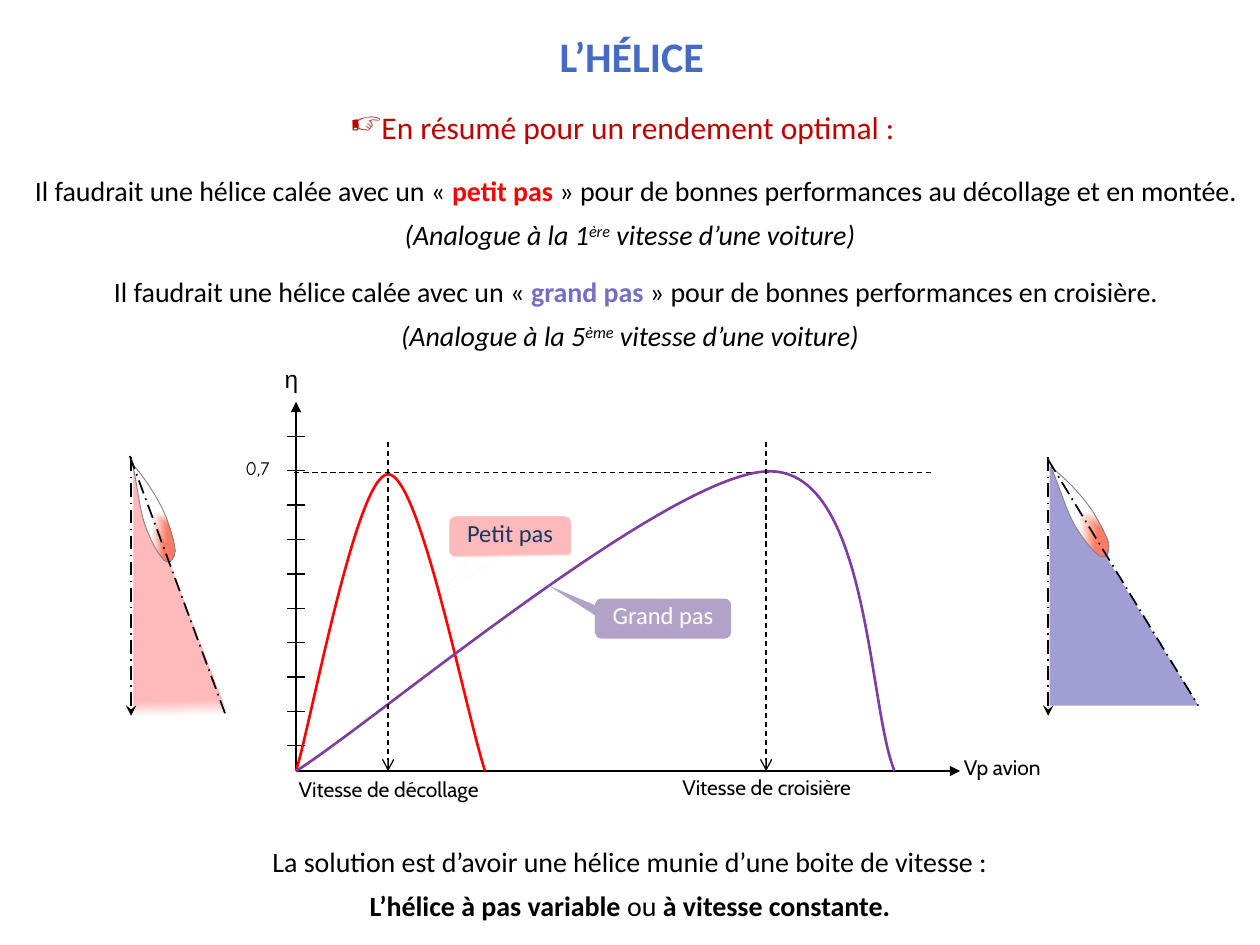
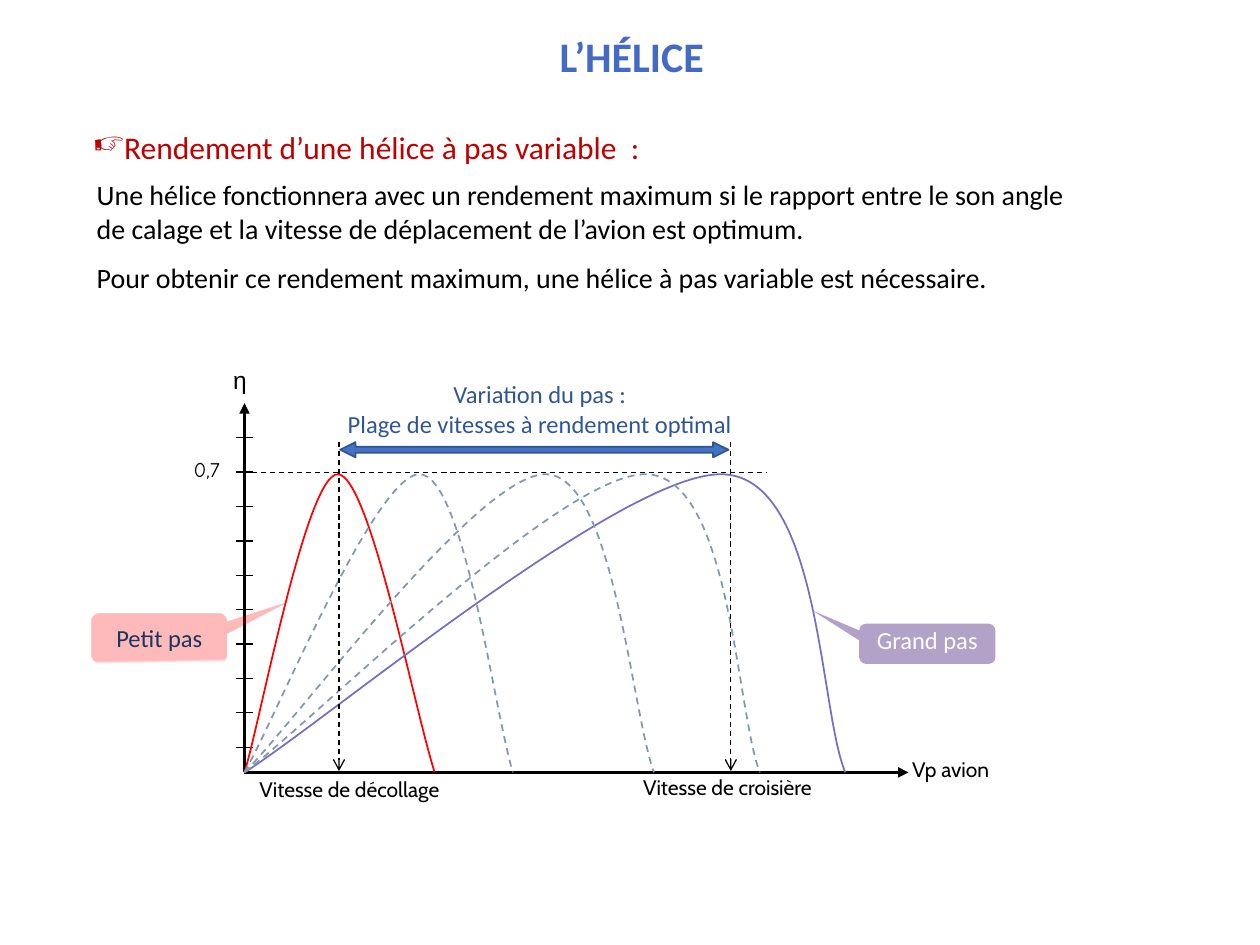
from math import cos, radians, sin

from lxml.etree import SubElement
from pptx import Presentation
from pptx.dml.color import RGBColor
from pptx.enum.dml import MSO_LINE as Dash
from pptx.enum.shapes import MSO_CONNECTOR, MSO_SHAPE as Preset
from pptx.enum.text import MSO_ANCHOR as Anchor, PP_ALIGN as Align
from pptx.oxml import parse_xml
from pptx.oxml.ns import nsdecls, qn
from pptx.util import Pt

COLORS = {
    "black": "000000", "white": "FFFFFF", "red": "FF0000", "heading": "C00000",
    "title": "456AC4", "violet": "746FC2", "purple": "7D3DA1", "lilac": "B3A2C7",
    "navy": "17375E", "range": "2F5597", "arrow": "4472C4", "arrow_edge": "325491",
    "between": "8497B0", "blade": "FF7D66", "blade_edge": "808080",
}
DOWNWARD = '<a:lin ang="5340000" scaled="0"/>'
TO_CORNER = '<a:path path="rect"><a:fillToRect l="100000" t="100000"/></a:path>'
# Gradient stops are (position %, colour, opacity %)
PINK_FADE = ([(92, "red", 27), (98, "white", 27)], DOWNWARD)
BLADE_GLOW = ([(41, "blade", 100), (100, "white", 100)], TO_CORNER)

# Blade edges from the hub, three Bezier segments each
BLADE_EDGES = [
    [(0, 0), (8, 9), (17, 23), (20.2, 33), (22, 38), (24.5, 46), (24.5, 50),
     (24.5, 52), (23.5, 54), (22.3, 55.4)],
    [(0, 0), (2.5, 9), (4, 27), (7.9, 36.7), (10, 42), (13, 49), (16.6, 53.3),
     (18.5, 56), (21, 57), (22.3, 55.4)],
]
TIGHT = (0, 0, 0, 0)
LEVEL_Y = 270


def rgb(name):
    return RGBColor.from_string(COLORS[name])


def write(frame, paragraphs, align=Align.LEFT, after=0, spacing=None, bullet=None,
          indent=0, margins=(7.2, 3.6, 7.2, 3.6), anchor=Anchor.TOP, wrap=True, **font):
    """Each paragraph is a string or a list of (text, font changes) runs."""
    frame.word_wrap, frame.vertical_anchor = wrap, anchor
    (frame.margin_left, frame.margin_top,
     frame.margin_right, frame.margin_bottom) = map(Pt, margins)
    for number, runs in enumerate(paragraphs):
        paragraph = frame.add_paragraph() if number else frame.paragraphs[0]
        paragraph.alignment = align
        paragraph.space_after = Pt(after)
        if spacing:
            paragraph.line_spacing = spacing
        props = paragraph._p.get_or_add_pPr()
        if indent and number == 0:
            props.set("marL", str(Pt(indent)))
        if bullet:
            props.set("marL", "0")
            props.set("indent", str(Pt(-22.5)))
            SubElement(props, qn("a:buChar")).set("char", bullet)
        for text, changes in [(runs, {})] if isinstance(runs, str) else runs:
            add_run(paragraph, text, **{**font, **changes})


def add_run(paragraph, text, size=16, face="Calibri", color="black",
            bold=False, italic=False, raised=False):
    run = paragraph.add_run()
    run.text = text
    run.font.size, run.font.name = Pt(size), face
    run.font.bold, run.font.italic = bold, italic
    run.font.color.rgb = rgb(color)
    if raised:
        run._r.get_or_add_rPr().set("baseline", "30000")


class Deck:
    def __init__(self):
        self.show = Presentation()
        self.show.slide_width, self.show.slide_height = Pt(720), Pt(540)
        self.slide = None

    def new_slide(self):
        self.slide = self.show.slides.add_slide(self.show.slide_layouts[6])
        self.text((31, 20.9, 660, 26), ["L’HÉLICE"], size=24, color="title", bold=True,
                  align=Align.CENTER, spacing=0.9, margins=TIGHT)

    def text(self, box, paragraphs, **style):
        label = self.slide.shapes.add_textbox(*map(Pt, box))
        write(label.text_frame, paragraphs, **style)

    def paint(self, shape, fill=None, opacity=None, edge=None, width=1, dash=None):
        shape.shadow.inherit = False
        if isinstance(fill, tuple):
            self.fade(shape, *fill)
        elif fill:
            shape.fill.solid()
            shape.fill.fore_color.rgb = rgb(fill)
            if opacity:
                tint = shape._element.spPr.find(qn("a:solidFill"))[0]
                SubElement(tint, qn("a:alpha")).set("val", str(opacity * 1000))
        else:
            shape.fill.background()
        if edge:
            self.stroke(shape.line, edge, width, dash)
        else:
            shape.line.fill.background()

    def fade(self, shape, stops, direction):
        steps = "".join(
            f'<a:gs pos="{place * 1000}"><a:srgbClr val="{COLORS[color]}">'
            f'<a:alpha val="{opacity * 1000}"/></a:srgbClr></a:gs>'
            for place, color, opacity in stops)
        shape.fill.solid()
        solid = shape._element.spPr.find(qn("a:solidFill"))
        solid.getparent().replace(solid, parse_xml(
            f'<a:gradFill {nsdecls("a")} rotWithShape="1">'
            f'<a:gsLst>{steps}</a:gsLst>{direction}</a:gradFill>'))

    def stroke(self, line, color, width, dash):
        line.color.rgb = rgb(color)
        line.width = Pt(width)
        if dash:
            line.dash_style = dash

    def line(self, start, end, width=0.75, dash=None, tip=None):
        rule = self.slide.shapes.add_connector(
            MSO_CONNECTOR.STRAIGHT, *map(Pt, (*start, *end)))
        self.stroke(rule.line, "black", width, dash)
        if tip:
            SubElement(rule.line._get_or_add_ln(), qn("a:tailEnd")).set("type", tip)
        SubElement(rule._element.spPr, qn("a:effectLst"))

    def shape(self, preset, box, adjust=(), **look):
        figure = self.slide.shapes.add_shape(preset, *map(Pt, box))
        for index, value in enumerate(adjust):
            figure.adjustments[index] = value
        self.paint(figure, **look)
        return figure

    def callout(self, box, pointer, lines, fill=None, anchor=Anchor.BOTTOM,
                margins=(8.6, 4.3, 8.6, 4.3), **style):
        bubble = self.shape(Preset.ROUNDED_RECTANGULAR_CALLOUT, box,
                            (*pointer, 0.167), fill=fill)
        write(bubble.text_frame, lines, size=14, align=Align.CENTER,
              anchor=anchor, margins=margins, **style)

    def curve(self, points, **look):
        """Draw Bezier segments: a start, then two handles and an end for each."""
        start, *rest = [(Pt(x), Pt(y)) for x, y in points]
        builder = self.slide.shapes.build_freeform(*start)
        builder.add_line_segments(rest, close=False)
        bend = builder.convert_to_shape()
        legs = list(bend._element.iter(qn("a:lnTo")))
        outline = legs[0].getparent()
        for first in range(0, len(legs), 3):
            cubic = SubElement(outline, qn("a:cubicBezTo"))
            for leg in legs[first:first + 3]:
                cubic.append(leg[0])
                outline.remove(leg)
        self.paint(bend, **look)

    def efficiency(self, origin, peak, handle, fall, end, top=271, **look):
        """Efficiency curve; the first four lengths run right from the origin."""
        x, base = origin
        steps = [(0, base), (peak / 6, base - 28.4), (peak - handle, top), (peak, top),
                 (peak + handle, top), (fall, base - 35.5), (end, base)]
        self.curve([(x + dx, y) for dx, y in steps], **look)

    def axes(self, origin, level_end, level_size):
        x, base = origin
        self.line(origin, (x, base - 211), 1.5, tip="triangle")
        for step in range(10):
            y = base - 14.4 - 19.65 * step
            self.line((x - 5.1, y), (x + 5.1, y))
        self.text((x - 6.5, base - 232.6, 26, 17), ["η"], size=14, face="Arial",
                  margins=TIGHT)
        self.line(origin, (x + 379.5, base), 1.5, tip="triangle")
        self.text((x + 381.6, base - 9.2, 64, 14.4), ["Vp avion"], size=12,
                  face="Cabin", margins=TIGHT)
        # Level of best efficiency
        self.text((x - 29, 261, 18, 14), ["0,7"], size=level_size, face="Comic Neue",
                  margins=TIGHT, wrap=False)
        self.line((x - 1, LEVEL_Y), (level_end, LEVEL_Y), dash=Dash.DASH)

    def speeds(self, takeoff, cruise, label_left):
        for x in (takeoff, cruise):
            self.line((x, 252.7), (x, 440.6), dash=Dash.DASH, tip="arrow")
        for name, left, top in (("décollage", label_left, 443.5),
                                ("croisière", label_left + 216, 442.8)):
            self.text((left, top, 159, 14.4), [f"Vitesse de {name}"], size=12,
                      face="Cabin", align=Align.CENTER, margins=TIGHT)

    def pitch(self, hub, turn, triangle, axis_x, chord, **look):
        """Blade with its pitch angle, turned away from the steepest setting."""
        self.shape(Preset.RIGHT_TRIANGLE, triangle, **look)
        self.line((axis_x, 261.4), (axis_x, 409), 1, Dash.LONG_DASH_DOT, "stealth")
        c, s = cos(radians(turn)), sin(radians(turn))
        for edge in BLADE_EDGES:
            self.curve([(hub[0] + x * c + y * s, hub[1] - x * s + y * c) for x, y in edge],
                       fill=BLADE_GLOW, edge="blade_edge", width=0.5)
        self.line(*chord, 1, Dash.LONG_DASH_DOT)

    def small_pitch(self, box, pointer):
        self.callout(box, pointer, ["Petit pas"], fill=PINK_FADE, color="navy")

    def large_pitch(self, left, top):
        self.callout((left, top, 77.8, 23), (-0.845, -0.829), ["Grand pas"],
                     fill="lilac", color="white")

    def heading(self, box, words, **style):
        self.text(box, [words], size=18, color="heading", bullet="☞", after=6, **style)


def analogy(gear, suffix):
    slanted = {"italic": True}
    return [(f"(Analogue à la {gear}", slanted), (suffix, {"italic": True, "raised": True}),
            (" vitesse d’une voiture)", slanted)]


def summary_slide(deck):
    deck.new_slide()
    centred = {"align": Align.CENTER, "after": 6}
    strong = {"bold": True}
    deck.heading((193, 58.3, 333.4, 29), "En résumé pour un rendement optimal :", wrap=False)
    deck.text((0, 95.8, 720, 52), [
        [("Il faudrait une hélice calée avec un «", {}),
         (" petit pas", {"bold": True, "color": "red"}),
         (" » pour de bonnes performances au décollage et en montée.", {})],
        analogy("1", "ère")], indent=7, **centred)

    # Blades at both settings
    deck.pitch((75.6, 265), 0, (76.3, 267.8, 54.7, 143.3), 74.9,
               ((74.2, 260.6), (129.6, 410.4)), fill=PINK_FADE)
    deck.pitch((600.5, 266.8), 10.5, (599.8, 266.4, 85, 136.8), 599,
               ((599, 262.8), (684.7, 403.2)), fill="violet", opacity=67)

    deck.text((0, 153.4, 720, 52), [
        [("Il faudrait une hélice calée avec un « ", {}),
         ("grand pas ", {"bold": True, "color": "violet"}),
         ("» pour de bonnes performances en croisière.", {})],
        analogy("5", "ème")], indent=7, **centred)
    deck.text((0, 478.8, 720, 52), [
        "La solution est d’avoir une hélice munie d’une boite de vitesse :",
        [("L’hélice à pas variable ", strong), ("ou", {}),
         (" à vitesse constante.", strong)]], **centred)

    # Efficiency graph
    origin = (169.2, 440.6)
    deck.axes(origin, 533.5, 11)
    deck.efficiency(origin, 52.6, 18, 96.5, 108, edge="red", width=1.5)
    deck.efficiency(origin, 270.7, 56.9, 326.9, 342, top=269.3, edge="purple", width=1.5)
    deck.speeds(221.8, 437.8, 142.6)
    deck.small_pitch((257, 295.2, 69.1, 23), (-0.576, 1.433))
    deck.large_pitch(340, 342)


def variable_pitch_slide(deck):
    deck.new_slide()
    deck.text((48.2, 97.9, 567.4, 46), [
        "Une hélice fonctionnera avec un rendement maximum si le rapport entre le son angle "
        "de calage et la vitesse de déplacement de l’avion est optimum."])
    deck.heading((46, 69.8, 404, 29), "Rendement d’une hélice à pas variable  :")
    deck.text((48.2, 145.4, 567.4, 26.6), [
        "Pour obtenir ce rendement maximum, une hélice à pas variable est nécessaire."])

    # Efficiency graph, with the settings in between dashed
    origin = (139.7, 441.4)
    deck.axes(origin, 438.5, 12)
    deck.efficiency(origin, 53.3, 18, 97.2, 108.7, edge="red")
    deck.efficiency(origin, 272.2, 57.2, 328.3, 343.4, edge="violet")
    for setting in ((229, 49, 280.8, 294.5), (172, 38.9, 221, 234),
                    (100, 25.4, 142.6, 153.4)):
        deck.efficiency(origin, *setting, edge="between", dash=Dash.DASH)
    deck.speeds(193.7, 417.6, 120.2)

    # Range of speeds
    deck.shape(Preset.LEFT_RIGHT_ARROW, (194.4, 252.7, 221.8, 8.6), (0.389, 1.014),
               fill="arrow", edge="arrow_edge")
    deck.callout((140.4, 212.4, 336.2, 42.5), (-0.388, 0.492),
                 ["Variation du pas :", "Plage de vitesses à rendement optimal"],
                 anchor=Anchor.MIDDLE, margins=(7.2, 3.6, 7.2, 3.6), wrap=False,
                 color="range")
    deck.small_pitch((52.6, 350.6, 77, 28.1), (0.963, -0.742))
    deck.large_pitch(491, 356.4)


def main():
    deck = Deck()
    summary_slide(deck)
    variable_pitch_slide(deck)
    deck.show.save("out.pptx")


if __name__ == "__main__":
    main()
